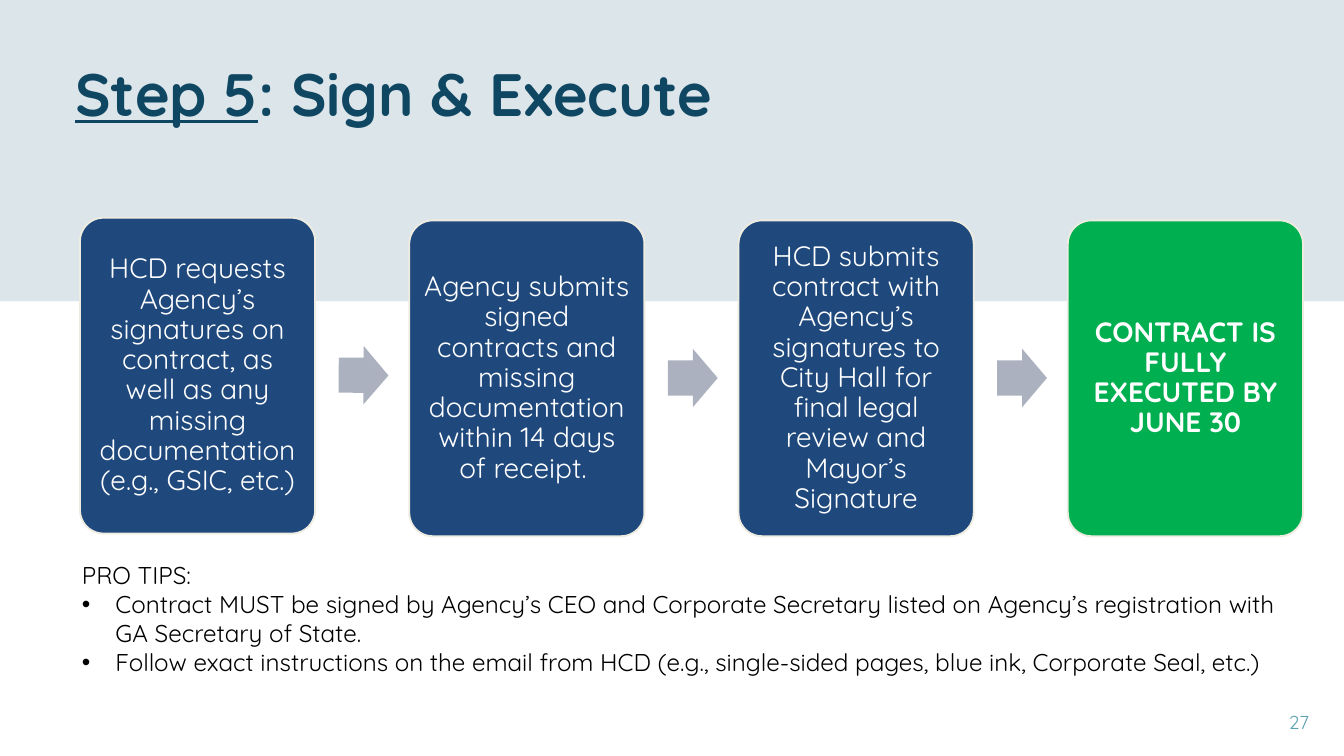
from lxml import etree
from pptx import Presentation
from pptx.dml.color import RGBColor
from pptx.enum.shapes import MSO_SHAPE
from pptx.enum.text import MSO_ANCHOR, PP_ALIGN
from pptx.oxml.ns import qn
from pptx.util import Pt

PX = 9144  # EMU per px, 100 px to the inch
FONT = "Quicksand"
RECTANGLE, ROUNDED, ARROW = (
    MSO_SHAPE.RECTANGLE, MSO_SHAPE.ROUNDED_RECTANGLE, MSO_SHAPE.RIGHT_ARROW)
TOP, MIDDLE = MSO_ANCHOR.TOP, MSO_ANCHOR.MIDDLE
LEFT, CENTER, RIGHT = PP_ALIGN.LEFT, PP_ALIGN.CENTER, PP_ALIGN.RIGHT

BAND = RGBColor(0xDB, 0xE5, 0xEA)
TITLE = RGBColor(0x0F, 0x46, 0x62)
NAVY = RGBColor(0x1F, 0x49, 0x7D)
GREEN = RGBColor(0x00, 0xB0, 0x50)
CREAM = RGBColor(0xEE, 0xEC, 0xE1)
GREY = RGBColor(0xAC, 0xB1, 0xBF)
TEAL = RGBColor(0x5A, 0xA2, 0xAE)
WHITE = RGBColor(0xFF, 0xFF, 0xFF)
BLACK = RGBColor(0x00, 0x00, 0x00)

# Content
title_parts = [("Step 5", True), (": Sign & Execute", False)]
# text, fill, bold, top of card
steps = [
    ("HCD requests Agency’s signatures on contract, as well as any missing "
     "documentation (e.g., GSIC, etc.)", NAVY, False, 324),
    ("Agency submits signed contracts and missing documentation within "
     "14 days of receipt. ", NAVY, False, 328),
    ("HCD submits contract with Agency’s signatures to City Hall for final "
     "legal review and Mayor’s Signature", NAVY, False, 328),
    ("CONTRACT IS FULLY EXECUTED BY JUNE 30", GREEN, True, 328),
]
tips_heading = "PRO TIPS:"
tips = [
    "Contract MUST be signed by Agency’s CEO and Corporate Secretary listed "
    "on Agency’s registration with GA Secretary of State.",
    "Follow exact instructions on the email from HCD (e.g., single-sided "
    "pages, blue ink, Corporate Seal, etc.)",
]
page_number = "27"

# Layout
CARD_LEFT, CARD_PITCH, CARD_W, CARD_H = 119, 490, 350, 470
ARROW_GAP, ARROW_W, ARROW_H = 35, 74, 87
ARROW_TILT = 0.4
BULLET_INDENT = 50

prs = Presentation()
prs.slide_width, prs.slide_height = 2000 * PX, 1125 * PX
slide = prs.slides.add_slide(prs.slide_layouts[6])


def box(left, top, width, height):
    return [length * PX for length in (left, top, width, height)]


def add_block(preset, frame, fill):
    block = slide.shapes.add_shape(preset, *box(*frame))
    block.shadow.inherit = False
    block.fill.solid()
    block.fill.fore_color.rgb = fill
    block.line.fill.background()
    return block


def set_frame(frame, margin_x, margin_y, anchor=TOP):
    settings = dict(word_wrap=True, vertical_anchor=anchor,
                    margin_left=margin_x * PX, margin_right=margin_x * PX,
                    margin_top=margin_y * PX, margin_bottom=margin_y * PX)
    for name, value in settings.items():
        setattr(frame, name, value)
    return frame


def add_text(frame, margin_x, margin_y, anchor=TOP):
    text_box = slide.shapes.add_textbox(*box(*frame))
    return set_frame(text_box.text_frame, margin_x, margin_y, anchor)


def write(paragraph, text, size, color, align=LEFT, **font_format):
    paragraph.alignment = align
    run = paragraph.add_run()
    run.text = text
    for name, value in dict(name=FONT, size=Pt(size), **font_format).items():
        setattr(run.font, name, value)
    run.font.color.rgb = color


def add_bullet(paragraph):
    props = paragraph._p.get_or_add_pPr()
    props.set("marL", str(BULLET_INDENT * PX))
    props.set("indent", str(-BULLET_INDENT * PX))
    etree.SubElement(props, qn("a:buFont")).set("typeface", "Arial")
    etree.SubElement(props, qn("a:buChar")).set("char", "•")


# Header band and title
add_block(RECTANGLE, (0, 0, 2000, 448), BAND)
title = add_text((112, 66, 1775, 242), 0, 0).paragraphs[0]
title.line_spacing = Pt(89.6)
for part, underlined in title_parts:
    write(title, part, 64, TITLE, bold=True, underline=underlined)

# Step cards, with an arrow after each but the last
for i, (text, fill, bold, top) in enumerate(steps):
    left = CARD_LEFT + i * CARD_PITCH
    card = add_block(ROUNDED, (left, top, CARD_W, CARD_H), fill)
    card.adjustments[0] = 0.1
    card.line.color.rgb = CREAM
    card.line.width = Pt(2)
    step = set_frame(card.text_frame, 12, 12, MIDDLE).paragraphs[0]
    step.line_spacing = 0.9
    write(step, text, 30, WHITE, CENTER, bold=bold)

    if i < len(steps) - 1:
        arrow_top = top + (CARD_H - ARROW_H) // 2
        arrow = add_block(ARROW, (left + CARD_W + ARROW_GAP, arrow_top,
                                  ARROW_W, ARROW_H), GREY)
        arrow.adjustments[0] = 0.6
        arrow.adjustments[1] = 0.5
        if top != steps[i + 1][3]:
            arrow.rotation = ARROW_TILT

# Tips
tips_frame = add_text((112, 829, 1822, 185), 10, 5)
write(tips_frame.paragraphs[0], tips_heading, 26, BLACK)
for tip in tips:
    tip_line = tips_frame.add_paragraph()
    write(tip_line, tip, 26, BLACK)
    add_bullet(tip_line)

# Page number
number_frame = add_text((1725, 1054, 233, 40), 10, 5, MIDDLE)
write(number_frame.paragraphs[0], page_number, 20, TEAL, RIGHT)

prs.save("out.pptx")
